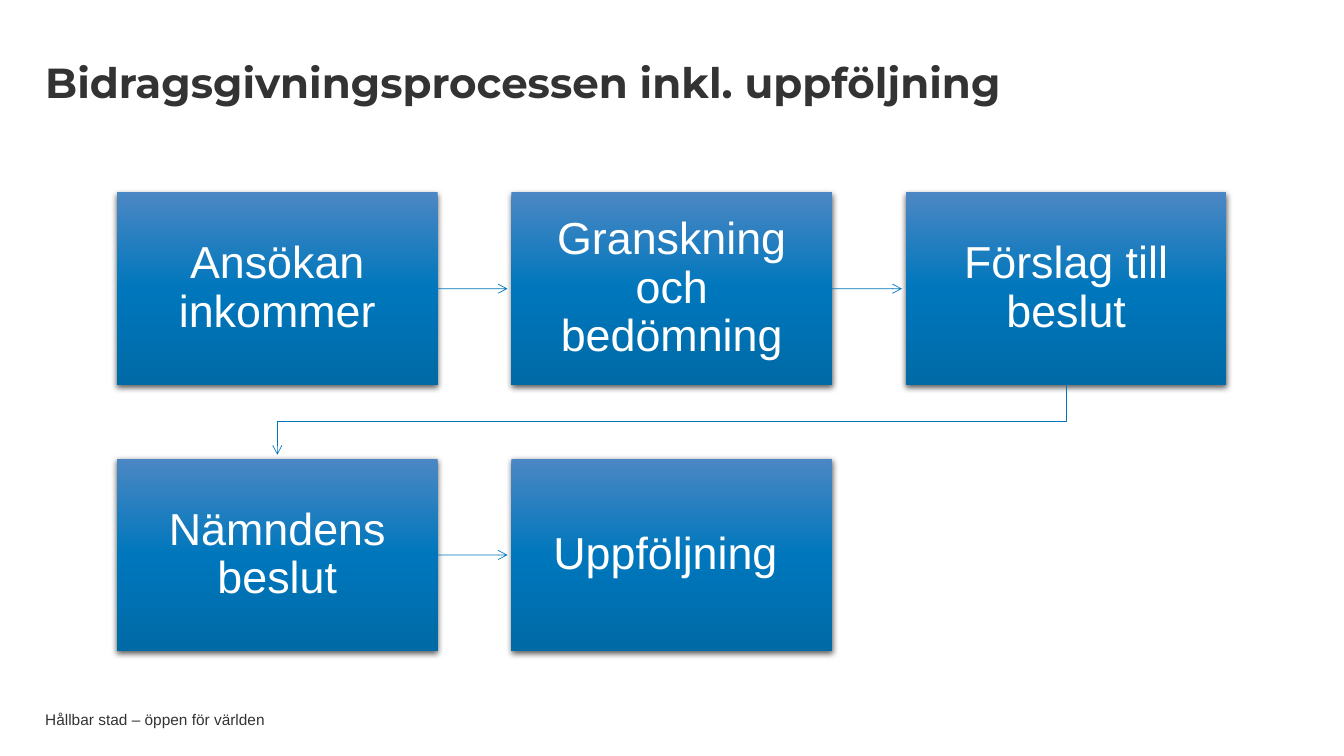
from copy import deepcopy

from lxml import etree
from pptx import Presentation
from pptx.dml.color import RGBColor
from pptx.enum.shapes import MSO_CONNECTOR, MSO_SHAPE
from pptx.enum.text import MSO_ANCHOR, PP_ALIGN
from pptx.oxml import parse_xml
from pptx.oxml.ns import nsdecls, qn
from pptx.util import Cm, Pt

RECTANGLE = MSO_SHAPE.RECTANGLE
STRAIGHT = MSO_CONNECTOR.STRAIGHT
MIDDLE = MSO_ANCHOR.MIDDLE
LEFT, CENTER = PP_ALIGN.LEFT, PP_ALIGN.CENTER

STEPS = ["Ansökan inkommer", "Granskning och bedömning", "Förslag till beslut",
         "Nämndens beslut", "Uppföljning "]
COLUMNS = 3
STEP_LEFT, STEP_TOP = 2.95, 4.85
STEP_WIDTH, STEP_HEIGHT = 8.08, 4.85
COLUMN_PITCH, ROW_PITCH = 9.94, 6.71
ARROW_GAP = 0.1
STEP_GRADIENT = [(0, "4B87C4"), (0.5, "0077BC"), (1, "006AA7")]
ARROW_COLOUR, TEXT_COLOUR, STEP_TEXT_COLOUR = "0077BC", "333333", "FFFFFF"
SHADOW = (f'<a:outerShdw {nsdecls("a")} blurRad="57150" dist="19050" dir="5400000" '
          'algn="ctr" rotWithShape="0"><a:srgbClr val="000000">'
          '<a:alpha val="63000"/></a:srgbClr></a:outerShdw>')


def colour(hex_value):
    """Turn a hex string into a colour."""
    return RGBColor.from_string(hex_value)


def write_text(shape, text, size, font_name, text_colour, align=LEFT,
               bold=False, spacing=1.0, insets=(0, 0)):
    """Fill a shape with one vertically centred paragraph."""
    frame = shape.text_frame
    frame.word_wrap = True
    frame.vertical_anchor = MIDDLE
    frame.margin_left = frame.margin_right = Cm(insets[0])
    frame.margin_top = frame.margin_bottom = Cm(insets[1])
    paragraph = frame.paragraphs[0]
    paragraph.alignment = align
    paragraph.line_spacing = spacing
    run = paragraph.add_run()
    run.text = text
    run.font.size = Pt(size)
    run.font.name = font_name
    run.font.bold = bold
    run.font.color.rgb = colour(text_colour)


def add_label(slide, left, top, width, height, text, size, font_name, **style):
    """Add a free-standing line of text."""
    label = slide.shapes.add_textbox(Cm(left), Cm(top), Cm(width), Cm(height))
    write_text(label, text, size, font_name, TEXT_COLOUR, **style)


def step_position(index):
    """Give the left and top of a process step in centimetres."""
    row, column = divmod(index, COLUMNS)
    return STEP_LEFT + column * COLUMN_PITCH, STEP_TOP + row * ROW_PITCH


def add_step(slide, index, text):
    """Add a process step with gradient and shadow."""
    left, top = step_position(index)
    step = slide.shapes.add_shape(RECTANGLE, Cm(left), Cm(top),
                                  Cm(STEP_WIDTH), Cm(STEP_HEIGHT))
    step.fill.gradient()
    step.fill.gradient_angle = 270
    properties = step._element.spPr
    stop_list = properties.find(".//" + qn("a:gsLst"))
    stop_list.append(deepcopy(stop_list[-1]))
    for stop, (position, hex_value) in zip(step.fill.gradient_stops, STEP_GRADIENT):
        stop.position = position
        stop.color.rgb = colour(hex_value)
    step.line.fill.background()
    step.shadow.inherit = False
    properties.find(qn("a:effectLst")).append(parse_xml(SHADOW))
    write_text(step, text, 32, "Arial", STEP_TEXT_COLOUR, align=CENTER,
               spacing=0.9, insets=(0.63, 0.63))
    return step


def style_arrow(arrow):
    """Give a line its colour, width and open arrowhead."""
    arrow.line.color.rgb = colour(ARROW_COLOUR)
    arrow.line.width = Pt(0.5)
    outline = arrow._element.spPr.find(qn("a:ln"))
    etree.SubElement(outline, qn("a:tailEnd"), type="arrow")


def add_row_arrow(slide, index, step):
    """Point from a step to the next one in its row."""
    left, top = step_position(index)
    middle = Cm(top + STEP_HEIGHT / 2)
    arrow = slide.shapes.add_connector(
        STRAIGHT, Cm(left + STEP_WIDTH), middle,
        Cm(left + COLUMN_PITCH - ARROW_GAP), middle)
    arrow.begin_connect(step, 3)
    style_arrow(arrow)
    etree.SubElement(arrow._element.spPr, qn("a:effectLst"))


def add_return_arrow(slide, index):
    """Point from the last step of a row to the first of the next."""
    left, top = step_position(index)
    next_left, next_top = step_position(index + 1)
    start_x, end_x = left + STEP_WIDTH / 2, next_left + STEP_WIDTH / 2
    start_y = top + STEP_HEIGHT
    turn_y = (start_y + next_top) / 2
    route = slide.shapes.build_freeform(Cm(start_x), Cm(start_y))
    route.add_line_segments([(Cm(start_x), Cm(turn_y)), (Cm(end_x), Cm(turn_y)),
                             (Cm(end_x), Cm(next_top - ARROW_GAP))], close=False)
    arrow = route.convert_to_shape()
    arrow.fill.background()
    style_arrow(arrow)
    arrow.shadow.inherit = False


def main():
    """Build the grant process slide."""
    deck = Presentation()
    deck.slide_width, deck.slide_height = Cm(33.87), Cm(19.05)
    slide = deck.slides.add_slide(deck.slide_layouts[6])
    add_label(slide, 1.14, 17.93, 24, 0.41, "Hållbar stad – öppen för världen",
              11, "Arial")
    add_label(slide, 1.14, 1.12, 25.48, 2.06,
              "Bidragsgivningsprocessen inkl. uppföljning", 30, "Montserrat",
              bold=True, spacing=0.9, insets=(0, 0.13))
    steps = [add_step(slide, index, text) for index, text in enumerate(STEPS)]
    for index, step in enumerate(steps[:-1]):
        if (index + 1) % COLUMNS:
            add_row_arrow(slide, index, step)
        else:
            add_return_arrow(slide, index)
    deck.save("out.pptx")


if __name__ == "__main__":
    main()
